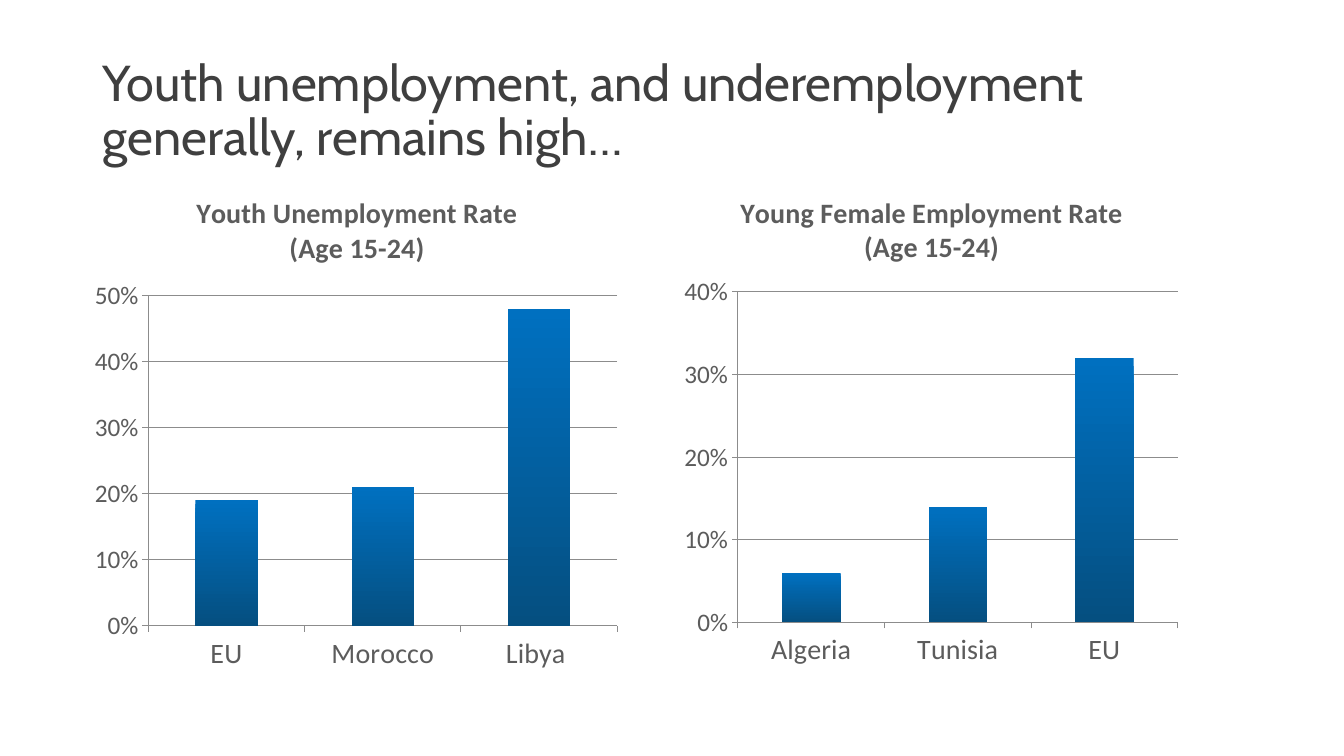
from pptx import Presentation
from pptx.chart.data import CategoryChartData
from pptx.dml.color import RGBColor
from pptx.enum.chart import XL_CHART_TYPE, XL_TICK_MARK
from pptx.enum.text import MSO_ANCHOR, MSO_AUTO_SIZE, PP_ALIGN
from pptx.oxml import parse_xml
from pptx.oxml.ns import nsdecls
from pptx.util import Pt


def color(code):
    return RGBColor.from_string(code)


class Deck:
    ink, gray, grid = "3F3F3F", "5C5C5C", "8C8C8C"
    bar = ("0070C0", "054F80")
    head, body = "Cabin", "Calibri"
    left, right, top, base = 45, 8, 85.5, 39.5

    def __init__(self):
        self.prs = Presentation()
        self.prs.slide_width, self.prs.slide_height = Pt(960), Pt(540)
        self.slide = self.prs.slides.add_slide(self.prs.slide_layouts[5])

    def style(self, font, size, face, code, bold=False):
        font.size, font.name, font.bold = Pt(size), face, bold
        font.color.rgb = color(code)

    def title(self, text, x, y, w, h):
        box = self.slide.shapes.title
        box.left, box.top, box.width, box.height = map(Pt, (x, y, w, h))
        frame = box.text_frame
        frame.text = text
        frame.word_wrap = True
        frame.auto_size = MSO_AUTO_SIZE.NONE
        frame.vertical_anchor = MSO_ANCHOR.MIDDLE
        line = frame.paragraphs[0]
        line.alignment, line.line_spacing = PP_ALIGN.LEFT, 0.9
        self.style(line.runs[0].font, 36, self.head, self.ink)

    def chart(self, text, cats, vals, peak, x, y, w, h):
        data = CategoryChartData(number_format="0%")
        data.categories = cats
        data.add_series("Series 1", vals)
        chart = self.slide.shapes.add_chart(
            XL_CHART_TYPE.COLUMN_CLUSTERED, Pt(x), Pt(y), Pt(w), Pt(h), data).chart
        self.style(chart.font, 10, self.body, self.gray)
        chart.has_legend = False
        frame = chart.chart_title.text_frame
        frame.text = text
        for line in frame.paragraphs:
            for run in line.runs:
                self.style(run.font, 20, self.body, self.gray, True)
        chart.chart_title.include_in_layout = False
        self.axis(chart.category_axis, 20)
        axis = chart.value_axis
        self.axis(axis, 18)
        axis.minimum_scale, axis.maximum_scale, axis.major_unit = 0, peak, 0.1
        axis.tick_labels.number_format = "0%"
        axis.tick_labels.number_format_is_linked = False
        axis.has_major_gridlines = True
        self.line(axis.major_gridlines.format.line)
        plot = chart.plots[0]
        plot.gap_width, plot.vary_by_categories = 150, False
        fill = plot.series[0].format.fill
        fill.gradient()
        fill.gradient_angle = 270
        for stop, code in zip(fill.gradient_stops, self.bar):
            stop.color.rgb = color(code)
        self.place(chart, w, h)

    def axis(self, axis, size):
        axis.major_tick_mark = XL_TICK_MARK.OUTSIDE
        axis.minor_tick_mark = XL_TICK_MARK.NONE
        self.style(axis.tick_labels.font, size, self.body, self.gray)
        self.line(axis.format.line)

    def line(self, line):
        line.width = Pt(0.75)
        line.color.rgb = color(self.grid)

    def place(self, chart, w, h):
        area = chart._chartSpace.chart.plotArea
        for old in area.xpath("c:layout"):
            area.remove(old)
        spots = {"x": self.left / w, "y": self.top / h,
                 "w": (w - self.left - self.right) / w,
                 "h": (h - self.top - self.base) / h}
        tags = "".join(f'<c:{key} val="{val:.3f}"/>' for key, val in spots.items())
        area.insert(0, parse_xml(
            f'<c:layout {nsdecls("c")}><c:manualLayout><c:layoutTarget val="inner"/>'
            f'<c:xMode val="edge"/><c:yMode val="edge"/>{tags}'
            '</c:manualLayout></c:layout>'))


def main():
    deck = Deck()
    deck.title("Youth unemployment, and underemployment generally, remains high…",
               66, 37.5, 757, 85)
    deck.chart("Youth Unemployment Rate\n(Age 15-24)", ["EU", "Morocco", "Libya "],
               [0.19, 0.21, 0.48], 0.5, 61, 125.5, 388, 361)
    deck.chart("Young Female Employment Rate (Age 15-24)", ["Algeria", "Tunisia", "EU"],
               [0.06, 0.14, 0.32], 0.4, 482, 123, 367, 361)
    deck.prs.save("out.pptx")


if __name__ == "__main__":
    main()
